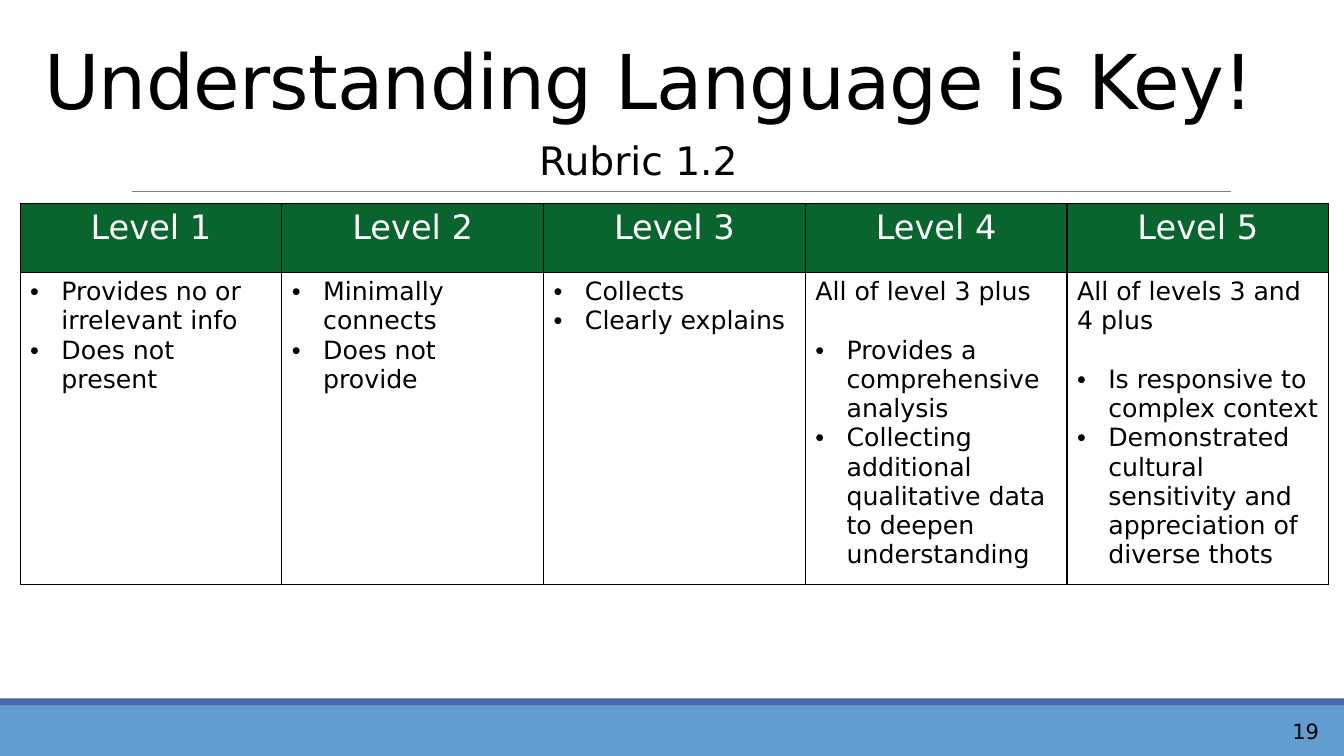
from dataclasses import dataclass

from lxml import etree
from pptx import Presentation
from pptx import util as u
from pptx.dml.color import RGBColor
from pptx.enum import shapes, text
from pptx.oxml import ns

TITLE = "Understanding Language is Key!"
SUBTITLE = "Rubric 1.2"
SLIDE_NUMBER = "19"
LEVELS = [
    ("Level 1", "", ["Provides no or irrelevant info", "Does not present"]),
    ("Level 2", "", ["Minimally connects", "Does not provide"]),
    ("Level 3", "", ["Collects", "Clearly explains"]),
    ("Level 4", "All of level 3 plus", [
        "Provides a comprehensive analysis",
        "Collecting additional qualitative data to deepen understanding"]),
    ("Level 5", "All of levels 3 and 4 plus", [
        "Is responsive to complex context",
        "Demonstrated cultural sensitivity and appreciation of diverse thots"]),
]


@dataclass(frozen=True)
class Theme:
    font: str = "DejaVu Sans"
    ink: str = "000000"
    white: str = "FFFFFF"
    header: str = "09652D"
    rule: str = "808080"
    band: str = "629DD1"
    stripe: str = "4A66AC"
    title_size: int = 54
    subtitle_size: int = 28
    header_size: int = 24
    body_size: int = 18
    number_size: int = 15


THEME = Theme()
ALIGN = text.PP_ALIGN
ANCHOR = text.MSO_ANCHOR
BULLET_INDENT = u.Inches(0.31)
BULLET_GAP = u.Pt(21)
TABLE_BOX = (0.2, 2.02, 12.98, 3.78)
HEADER_HEIGHT = 0.68


def box(*lengths):
    return [u.Inches(length) for length in lengths]


def apply(target, values):
    for name, value in values.items():
        setattr(target, name, value)


def write(paragraph, words, size, color=THEME.ink, **paragraph_format):
    run = paragraph.add_run()
    run.text = words
    apply(run.font, {"name": THEME.font, "size": u.Pt(size), "bold": False})
    run.font.color.rgb = RGBColor.from_string(color)
    apply(paragraph, paragraph_format)
    return run


def add_band(slide, bounds, color):
    band = slide.shapes.add_shape(shapes.MSO_SHAPE.RECTANGLE, *box(*bounds))
    band.shadow.inherit = False
    band.fill.solid()
    band.fill.fore_color.rgb = RGBColor.from_string(color)
    band.line.fill.background()


def add_rule(slide, *ends):
    rule = slide.shapes.add_connector(shapes.MSO_CONNECTOR.STRAIGHT, *box(*ends))
    rule.line.color.rgb = RGBColor.from_string(THEME.rule)
    rule.line.width = u.Pt(0.5)
    etree.SubElement(rule._element.spPr, ns.qn("a:effectLst"))


def add_title(slide):
    title = slide.shapes.title
    apply(title, dict(zip(("left", "top", "width", "height"),
                          box(0.34, 0.31, 12.83, 0.98))))
    apply(title.text_frame, {"vertical_anchor": ANCHOR.BOTTOM, "word_wrap": True,
                             "auto_size": text.MSO_AUTO_SIZE.NONE})
    run = write(title.text_frame.paragraphs[0], TITLE, THEME.title_size,
                alignment=ALIGN.LEFT, line_spacing=0.85)
    run.font._element.set("spc", "-50")


def add_label(slide, bounds, words, size, anchor, alignment):
    label = slide.shapes.add_textbox(*box(*bounds))
    apply(label.text_frame, {"word_wrap": True, "vertical_anchor": anchor})
    write(label.text_frame.paragraphs[0], words, size, alignment=alignment)


def add_bullet(paragraph):
    properties = paragraph._p.get_or_add_pPr()
    properties.set("marL", str(BULLET_INDENT))
    properties.set("indent", str(-BULLET_INDENT))
    etree.SubElement(properties, ns.qn("a:buFont"), typeface="Arial")
    etree.SubElement(properties, ns.qn("a:buChar"), char="•")


def add_borders(cell):
    properties = cell._tc.get_or_add_tcPr()
    for position, side in enumerate(("lnL", "lnR", "lnT", "lnB")):
        line = etree.Element(ns.qn(f"a:{side}"), w=str(u.Pt(1)))
        fill = etree.SubElement(line, ns.qn("a:solidFill"))
        etree.SubElement(fill, ns.qn("a:srgbClr"), val=THEME.ink)
        properties.insert(position, line)


def fill_header(cell, name):
    cell.fill.solid()
    cell.fill.fore_color.rgb = RGBColor.from_string(THEME.header)
    write(cell.text_frame.paragraphs[0], name, THEME.header_size, THEME.white,
          alignment=ALIGN.CENTER)


def fill_body(cell, lead, points):
    cell.fill.background()
    frame = cell.text_frame
    if lead:
        write(frame.paragraphs[0], lead, THEME.body_size)
    for index, point in enumerate(points):
        first = index == 0
        paragraph = frame.add_paragraph() if lead or not first else frame.paragraphs[0]
        gap = BULLET_GAP if lead and first else u.Pt(0)
        write(paragraph, point, THEME.body_size, space_before=gap)
        add_bullet(paragraph)


def add_rubric(slide):
    table = slide.shapes.add_table(2, len(LEVELS), *box(*TABLE_BOX)).table
    apply(table, {"first_row": False, "horz_banding": False})
    table.rows[0].height = u.Inches(HEADER_HEIGHT)
    table.rows[1].height = u.Inches(TABLE_BOX[3] - HEADER_HEIGHT)
    for column, (name, lead, points) in enumerate(LEVELS):
        fill_header(table.cell(0, column), name)
        fill_body(table.cell(1, column), lead, points)
    for cell in table.iter_cells():
        add_borders(cell)


def main():
    presentation = Presentation()
    apply(presentation, {"slide_width": u.Inches(13.33),
                         "slide_height": u.Inches(7.5)})
    slide = presentation.slides.add_slide(presentation.slide_layouts[5])
    add_band(slide, (0, 7, 13.33, 0.5), THEME.band)
    add_band(slide, (0, 6.93, 13.33, 0.07), THEME.stripe)
    add_rule(slide, 1.31, 1.9, 12.21, 1.9)
    add_title(slide)
    add_label(slide, (5.25, 1.3, 2.3, 0.57), SUBTITLE, THEME.subtitle_size,
              ANCHOR.TOP, ALIGN.LEFT)
    add_rubric(slide)
    add_label(slide, (12.46, 7.03, 0.72, 0.44), SLIDE_NUMBER, THEME.number_size,
              ANCHOR.MIDDLE, ALIGN.RIGHT)
    presentation.save("out.pptx")


if __name__ == "__main__":
    main()
